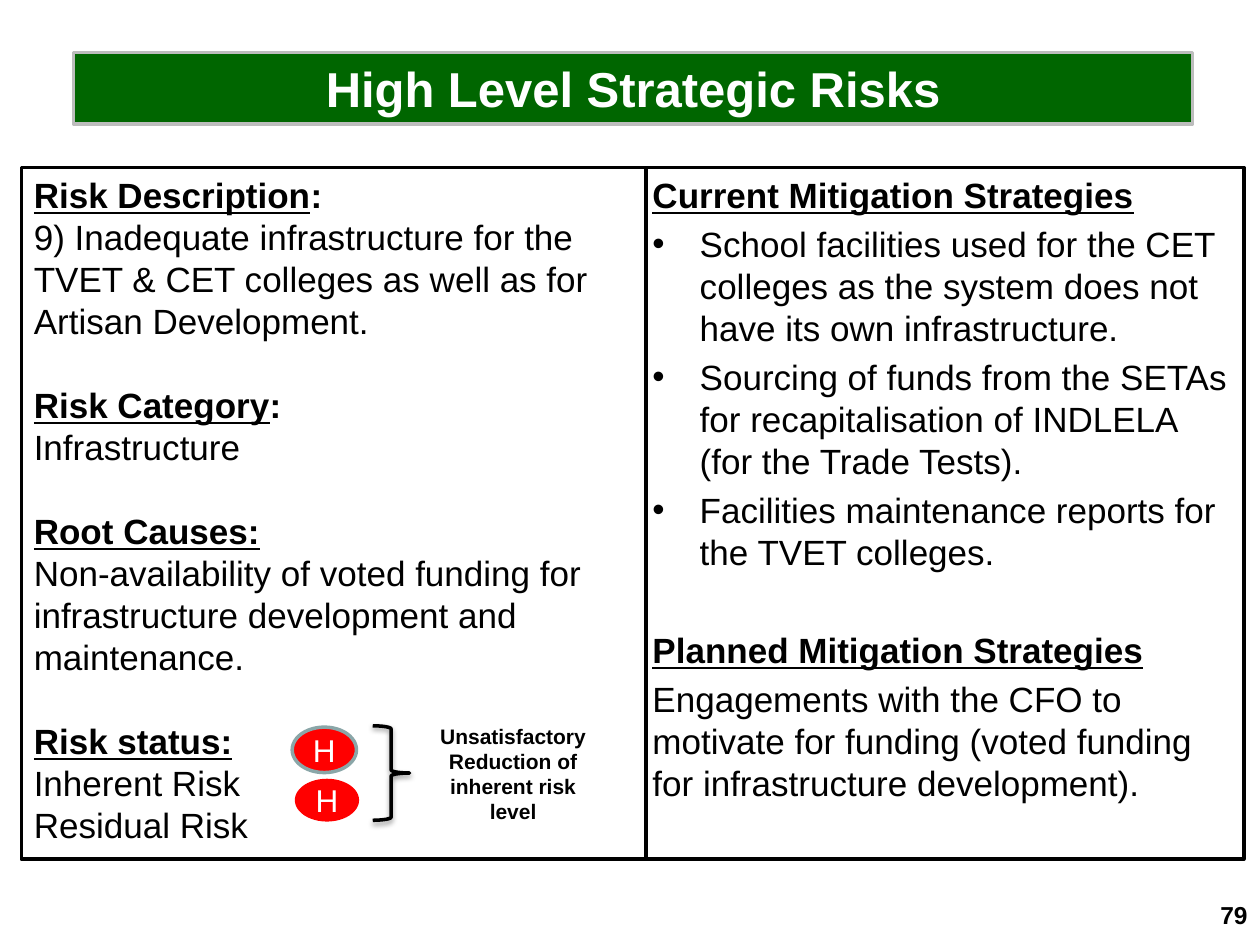
from lxml.etree import SubElement
from pptx import Presentation
from pptx.dml.color import RGBColor
from pptx.enum.shapes import MSO_SHAPE
from pptx.enum.text import MSO_ANCHOR, MSO_AUTO_SIZE, PP_ALIGN
from pptx.oxml.ns import qn
from pptx.util import Pt

HUES = {"black": "000000", "white": "FFFFFF", "green": "006600",
        "red": "FF0000", "silver": "BDBDBD", "teal": "8AA6A8"}

RISK = [
    ("head", "Risk Description", ":", 0),
    ("text", "9) Inadequate infrastructure for the TVET & CET colleges as well as "
             "for Artisan Development.", "", 0),
    ("head", "Risk Category", ":", 24),
    ("text", "Infrastructure", "", 0),
    ("head", "Root Causes:", "", 24),
    ("text", "Non-availability of voted funding for infrastructure development "
             "and maintenance.", "", 0),
    ("head", "Risk status:", "", 24),
    ("text", "Inherent Risk", "", 0),
    ("text", "Residual Risk", "", 0),
]
PLAN = [
    ("head", "Current Mitigation Strategies", "", 0),
    ("item", "School facilities used for the CET colleges as the system does not "
             "have its own infrastructure.", "", 4),
    ("item", "Sourcing of funds from the SETAs for recapitalisation of INDLELA "
             "(for the Trade Tests).", "", 4),
    ("item", "Facilities maintenance reports for the TVET colleges.", "", 4),
    ("head", "Planned Mitigation Strategies", "", 32),
    ("text", "Engagements with the CFO to motivate for funding (voted funding "
             "for infrastructure development).", "", 4),
]


def tint(name):
    return RGBColor.from_string(HUES[name])


def style(run, size, hue="black", bold=False, under=False):
    font = run.font
    font.name, font.size = "Arial", Pt(size)
    font.bold, font.underline = bold, under
    font.color.rgb = tint(hue)


def place(shape, box):
    shape.left, shape.top, shape.width, shape.height = map(Pt, box)


def paint(shape, fill, line=None):
    shape.fill.solid()
    shape.fill.fore_color.rgb = tint(fill)
    if line:
        shape.line.color.rgb = tint(line)
        shape.line.width = Pt(2)
    else:
        shape.line.fill.background()


def label(shape, text, size, hue="black", bold=True,
          align=PP_ALIGN.CENTER, anchor=MSO_ANCHOR.MIDDLE):
    frame = shape.text_frame
    frame.text = text
    frame.word_wrap = True
    frame.auto_size = MSO_AUTO_SIZE.NONE
    frame.vertical_anchor = anchor
    para = frame.paragraphs[0]
    para.alignment = align
    style(para.runs[0], size, hue, bold)


def bullet(para):
    props = para._p.get_or_add_pPr()
    props.set("marL", str(Pt(27)))
    props.set("indent", str(-Pt(27)))
    SubElement(props, qn("a:buFont"), typeface="Arial")
    SubElement(props, qn("a:buChar"), char="•")


def panel(slide, box, rows):
    shape = slide.shapes.add_shape(MSO_SHAPE.RECTANGLE, *map(Pt, box))
    shape.shadow.inherit = False
    paint(shape, "white", "black")
    frame = shape.text_frame
    frame.word_wrap = True
    frame.vertical_anchor = MSO_ANCHOR.TOP
    for i, (kind, text, tail, gap) in enumerate(rows):
        para = frame.add_paragraph() if i else frame.paragraphs[0]
        para.text = text
        para.alignment = PP_ALIGN.LEFT
        para.space_before = Pt(gap)
        head = kind == "head"
        style(para.runs[0], 20, bold=head, under=head)
        if tail:
            run = para.add_run()
            run.text = tail
            style(run, 20, bold=head)
        if kind == "item":
            bullet(para)


def badge(slide, box, line=None):
    shape = slide.shapes.add_shape(MSO_SHAPE.OVAL, *map(Pt, box))
    shape.shadow.inherit = False
    paint(shape, "red", line)
    frame = shape.text_frame
    frame.margin_top = frame.margin_bottom = 0
    frame.margin_left = frame.margin_right = 0
    label(shape, "H", 18, "white", False)


def brace(slide, box):
    shape = slide.shapes.add_shape(MSO_SHAPE.RIGHT_BRACE, *map(Pt, box))
    shape.fill.background()
    shape.line.color.rgb = tint("black")
    shape.line.width = Pt(2)
    shape.shadow.inherit = False
    glow = SubElement(shape._element.spPr.find(qn("a:effectLst")),
                      qn("a:outerShdw"), blurRad=str(Pt(3.1)),
                      dist=str(Pt(1.6)), dir="5400000", rotWithShape="0")
    hue = SubElement(glow, qn("a:srgbClr"), val=HUES["black"])
    SubElement(hue, qn("a:alpha"), val="38000")


def note(slide, box, text, size, **look):
    label(slide.shapes.add_textbox(*map(Pt, box)), text, size, **look)


def main():
    deck = Presentation()
    deck.slide_width, deck.slide_height = Pt(720), Pt(540)
    slide = deck.slides.add_slide(deck.slide_layouts[5])
    title = slide.shapes.title
    place(title, (42, 30, 639.5, 41))
    paint(title, "green", "silver")
    label(title, "High Level Strategic Risks", 28, "white")

    panel(slide, (365.75, 95.75, 345, 395.25), PLAN)
    panel(slide, (12.25, 95.75, 357, 395.25), RISK)
    badge(slide, (167, 415.5, 36.75, 26), "teal")
    badge(slide, (168.5, 445, 36.75, 24.5))
    brace(slide, (213, 414.75, 21, 54))
    note(slide, (243.5, 409.5, 99.5, 65),
         "Unsatisfactory Reduction of inherent risk level", 12)
    note(slide, (552, 510.5, 168, 29), "79", 14,
         align=PP_ALIGN.RIGHT, anchor=MSO_ANCHOR.TOP)
    deck.save("out.pptx")


if __name__ == "__main__":
    main()
